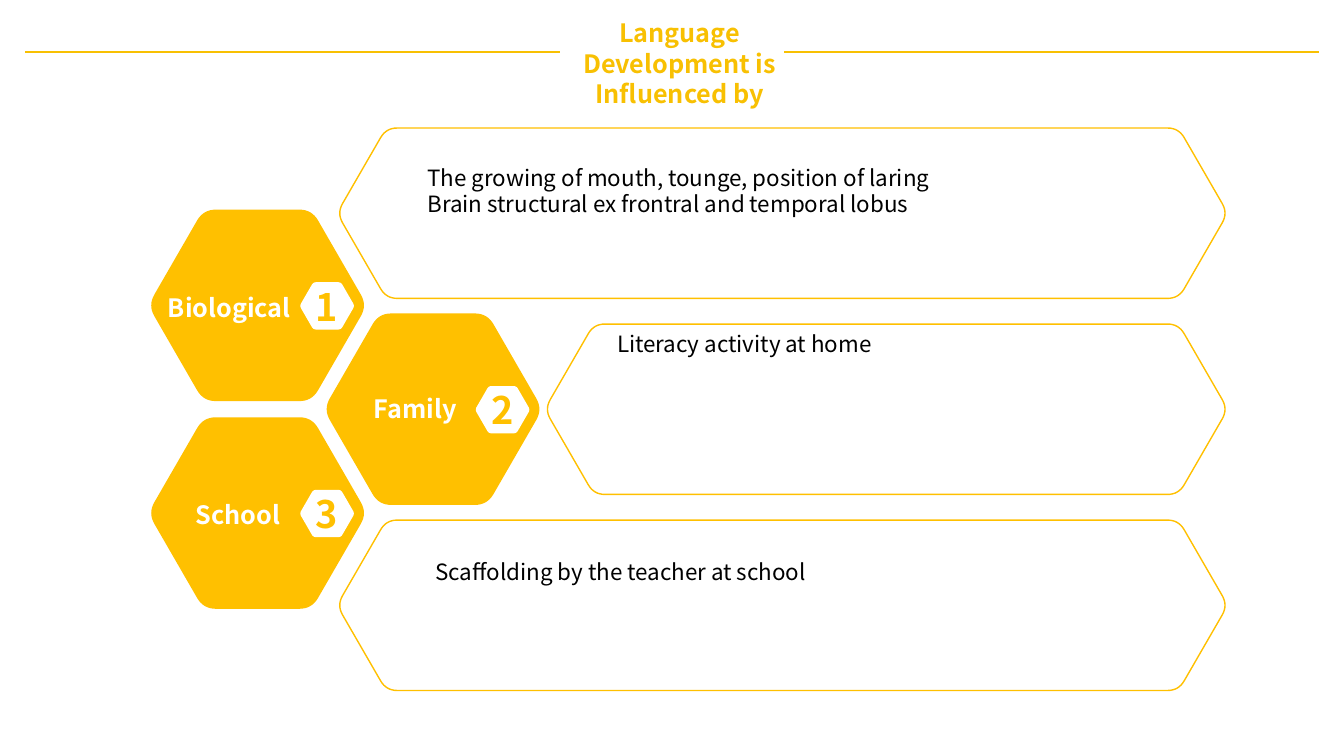
import math

import pptx
import pptx.dml.color
import pptx.enum.shapes
import pptx.enum.text
import pptx.util
from lxml import etree
from pptx.util import Inches

COLOURS = {"amber": "FFC000", "gold": "F8C002", "white": "FFFFFF", "black": "000000"}
FONT = "Noto Sans CJK SC"
ALIGN = pptx.enum.text.PP_ALIGN
ANCHOR = pptx.enum.text.MSO_ANCHOR

HEXAGON_SIZE = (2.11, 1.9)
BADGE_SIZE = (0.53, 0.47)
PANEL_RIGHT, PANEL_HEIGHT = 12.15, 1.69
HEXAGON_TOP, HEXAGON_PITCH = 2.08, 1.03
PANEL_TOP, PANEL_PITCH = 1.27, 1.945

# label, label box, hexagon left, panel left, factors, factors box
INFLUENCES = [
    ("Biological", (1.62, 2.59, 1.31, 0.61), 1.5, 3.37,
     ["The growing of mouth, tounge, position of laring",
      "Brain structural ex frontral and temporal lobus"], (4.24, 1.64, 7.19, 0.53)),
    ("Family", (3.54, 3.59, 1.16, 0.61), 3.24, 5.43,
     ["Literacy activity at home"], (6.12, 3.28, 5.55, 0.53)),
    ("School", (1.82, 4.64, 1.08, 0.61), 1.5, 3.37,
     ["Scaffolding by the teacher at school"], (4.32, 5.55, 6.34, 0.27)),
]


def rgb(name):
    return pptx.dml.color.RGBColor.from_string(COLOURS[name])


def rounded_hexagon_points(left, top, width, height, steps=8):
    """Outline of a flat-topped hexagon whose corners are quadratic curves."""
    cut = 0.065 * height
    slant = height / 2 * math.tan(math.radians(30))
    west, east = left - cut / 4, left + width + cut / 4
    middle, bottom = top + height / 2, top + height
    corners = [(west + slant, top), (east - slant, top), (east, middle),
               (east - slant, bottom), (west + slant, bottom), (west, middle)]

    def toward(corner, neighbour):
        share = cut / math.dist(corner, neighbour)
        return [c + share * (n - c) for c, n in zip(corner, neighbour)]

    points = []
    for i, corner in enumerate(corners):
        start = toward(corner, corners[i - 1])
        end = toward(corner, corners[(i + 1) % 6])
        for step in range(steps + 1):
            t = step / steps
            points.append(tuple((1 - t) ** 2 * s + 2 * t * (1 - t) * c + t ** 2 * e
                                for s, c, e in zip(start, corner, end)))
    return points


def add_hexagon(slide, box, fill, outline=None):
    points = [(Inches(x), Inches(y)) for x, y in rounded_hexagon_points(*box)]
    builder = slide.shapes.build_freeform(*points[0], scale=1.0)
    builder.add_line_segments(points[1:], close=True)
    hexagon = builder.convert_to_shape()
    hexagon.shadow.inherit = False
    hexagon.fill.solid()
    hexagon.fill.fore_color.rgb = rgb(fill)
    if outline:
        hexagon.line.color.rgb = rgb(outline)
        hexagon.line.width = pptx.util.Pt(1)
    else:
        hexagon.line.fill.background()
    return hexagon


def write(shape, lines, size, colour, bold=False, align=ALIGN.CENTER,
          anchor=ANCHOR.MIDDLE, spacing=None, inset=0):
    frame = shape.text_frame
    frame.word_wrap = True
    frame.vertical_anchor = anchor
    frame.margin_left = frame.margin_right = Inches(inset)
    frame.margin_top = frame.margin_bottom = Inches(inset / 2)
    for i, line in enumerate(lines):
        paragraph = frame.add_paragraph() if i else frame.paragraphs[0]
        paragraph.alignment = align
        if spacing:
            paragraph.line_spacing = pptx.util.Pt(spacing)
        run = paragraph.add_run()
        run.text = line
        run.font.name = FONT
        run.font.size = pptx.util.Pt(size)
        run.font.bold = bold
        run.font.color.rgb = rgb(colour)


def add_text(slide, box, lines, **style):
    write(slide.shapes.add_textbox(*map(Inches, box)), lines, **style)


def add_rule(slide, left, right, y):
    rule = slide.shapes.add_connector(
        pptx.enum.shapes.MSO_CONNECTOR.STRAIGHT,
        Inches(left), Inches(y), Inches(right), Inches(y))
    rule.line.color.rgb = rgb("gold")
    rule.line.width = pptx.util.Pt(1.5)
    etree.SubElement(rule._element.spPr, pptx.oxml.ns.qn("a:effectLst"))


def add_influence(slide, index, influence):
    label, label_box, hexagon_left, panel_left, factors, factors_box = influence
    hexagon_top = HEXAGON_TOP + index * HEXAGON_PITCH
    panel_top = PANEL_TOP + index * PANEL_PITCH
    add_hexagon(slide, (panel_left, panel_top, PANEL_RIGHT - panel_left, PANEL_HEIGHT),
                "white", outline="amber")
    add_hexagon(slide, (hexagon_left, hexagon_top, *HEXAGON_SIZE), "amber")
    badge = add_hexagon(slide, (hexagon_left + 1.48, hexagon_top + 0.72, *BADGE_SIZE), "white")
    write(badge, [str(index + 1)], size=27, colour="amber", bold=True)
    add_text(slide, label_box, [label], size=18, colour="white", bold=True,
             anchor=ANCHOR.BOTTOM)
    add_text(slide, factors_box, factors, size=16, colour="black",
             align=ALIGN.JUSTIFY, anchor=ANCHOR.TOP, spacing=18.6)


def main():
    presentation = pptx.Presentation()
    presentation.slide_width = Inches(13.33)
    presentation.slide_height = Inches(7.5)
    slide = presentation.slides.add_slide(presentation.slide_layouts[6])
    for index, influence in enumerate(INFLUENCES):
        add_influence(slide, index, influence)
    for left, right in ((0.25, 5.55), (7.78, 13.08)):
        add_rule(slide, left, right, 0.52)
    add_text(slide, (5.43, 0.2, 2.62, 0.85), ["Language Development is Influenced by"],
             size=18, colour="gold", bold=True, inset=0.1)
    presentation.save("out.pptx")


if __name__ == "__main__":
    main()
